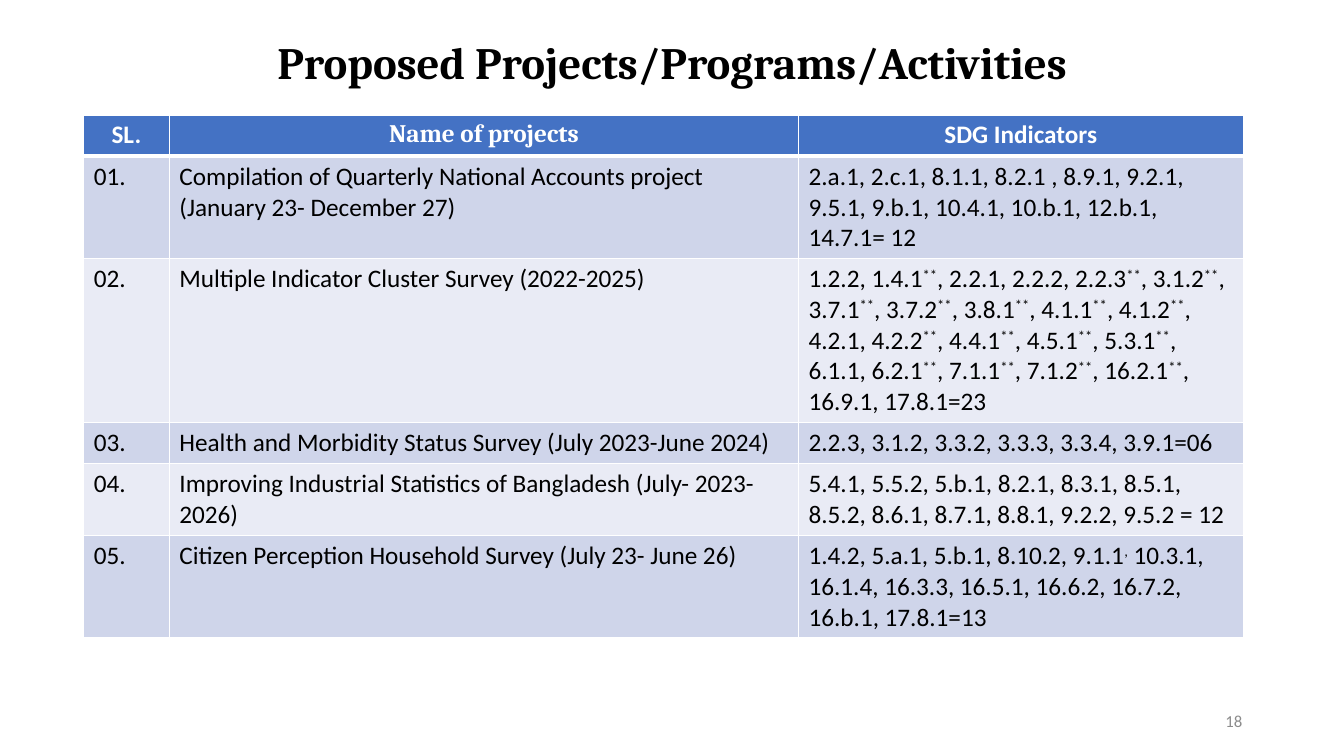
from lxml.etree import SubElement
from pptx import Presentation
from pptx.dml.color import RGBColor
from pptx.enum.text import MSO_ANCHOR, PP_ALIGN
from pptx.oxml.ns import qn
from pptx.util import Inches, Pt

HUES = {
    "ink": "000000",
    "white": "FFFFFF",
    "head": "4472C4",
    "odd": "CFD5EA",
    "even": "E9EBF5",
    "page": "8C8C8C",
}
WIDTHS = (0.85, 6.24, 4.41)
ROW = 0.41
HEADS = (("SL.", "Calibri"), ("Name of projects", "Cambria"), ("SDG Indicators", "Calibri"))
ITEMS = (
    ("Compilation of Quarterly National Accounts project (January 23- December 27)",
     "2.a.1, 2.c.1, 8.1.1, 8.2.1 , 8.9.1, 9.2.1, 9.5.1, 9.b.1, 10.4.1, 10.b.1, "
     "12.b.1, 14.7.1= 12"),
    ("Multiple Indicator Cluster Survey (2022-2025)",
     "1.2.2, 1.4.1^**^, 2.2.1, 2.2.2, 2.2.3^**^, 3.1.2^**^, 3.7.1^**^, 3.7.2^**^, "
     "3.8.1^**^, 4.1.1^**^, 4.1.2^**^, 4.2.1, 4.2.2^**^, 4.4.1^**^, 4.5.1^**^, "
     "5.3.1^**^, 6.1.1, 6.2.1^**^, 7.1.1^**^, 7.1.2^**^, 16.2.1^**^, 16.9.1, 17.8.1=23"),
    ("Health and Morbidity Status Survey (July 2023-June 2024)",
     "2.2.3, 3.1.2, 3.3.2, 3.3.3, 3.3.4, 3.9.1=06"),
    ("Improving Industrial Statistics of Bangladesh (July- 2023-2026)",
     "5.4.1, 5.5.2, 5.b.1, 8.2.1, 8.3.1, 8.5.1, 8.5.2, 8.6.1, 8.7.1, 8.8.1, "
     "9.2.2, 9.5.2 = 12"),
    ("Citizen Perception Household Survey (July 23- June 26)",
     "1.4.2, 5.a.1, 5.b.1, 8.10.2, 9.1.1^,^ 10.3.1, 16.1.4, 16.3.3, 16.5.1, "
     "16.6.2, 16.7.2, 16.b.1, 17.8.1=13"),
)


def tint(name):
    return RGBColor.from_string(HUES[name])


def write(frame, text, hue, align=PP_ALIGN.LEFT, **style):
    para = frame.paragraphs[0]
    para.alignment = align
    for i, part in enumerate(text.split("^")):
        run = para.add_run()
        run.text = part
        run.font.color.rgb = tint(hue)
        for key, value in style.items():
            setattr(run.font, key, value)
        if i % 2:
            run._r.get_or_add_rPr().set("baseline", "30000")
    return para


def edge(cell, base):
    props = cell._tc.get_or_add_tcPr()
    for side, wide in (("L", 1), ("R", 1), ("T", 1), ("B", base)):
        line = SubElement(props, qn(f"a:ln{side}"), w=str(Pt(wide)))
        fill = SubElement(line, qn("a:solidFill"))
        SubElement(fill, qn("a:srgbClr"), val=HUES["white"])


def paint(cell, hue, base=1):
    edge(cell, base)
    cell.fill.solid()
    cell.fill.fore_color.rgb = tint(hue)


def add_title(slide, box):
    title = slide.shapes.title
    for key, value in zip(("left", "top", "width", "height"), box):
        setattr(title, key, Inches(value))
    title.text_frame.vertical_anchor = MSO_ANCHOR.MIDDLE
    para = write(title.text_frame, "Proposed Projects/Programs/Activities", "ink",
                 PP_ALIGN.CENTER, size=Pt(32), name="Cambria", bold=True)
    para.line_spacing = 0.9


def add_grid(slide, left, top):
    count = len(ITEMS) + 1
    grid = slide.shapes.add_table(count, len(WIDTHS), Inches(left), Inches(top),
                                  Inches(sum(WIDTHS)), Inches(ROW * count)).table
    for col, width in zip(grid.columns, WIDTHS):
        col.width = Inches(width)
    for row in grid.rows:
        row.height = Inches(ROW)
    for cell, (text, face) in zip(grid.rows[0].cells, HEADS):
        paint(cell, "head", 3)
        write(cell.text_frame, text, "white", PP_ALIGN.CENTER,
              size=Pt(18), name=face, bold=True)
    for i, item in enumerate(ITEMS, 1):
        for cell, text in zip(grid.rows[i].cells, (f"{i:02}.", *item)):
            paint(cell, "odd" if i % 2 else "even")
            write(cell.text_frame, text, "ink", size=Pt(18), name="Calibri", bold=False)


def add_page(slide, box):
    frame = slide.shapes.add_textbox(*map(Inches, box)).text_frame
    frame.word_wrap = True
    frame.vertical_anchor = MSO_ANCHOR.MIDDLE
    write(frame, "18", "page", PP_ALIGN.RIGHT, size=Pt(12), name="Calibri")


def main():
    deck = Presentation()
    deck.slide_width, deck.slide_height = Inches(13.33), Inches(7.5)
    slide = deck.slides.add_slide(deck.slide_layouts[5])
    add_title(slide, (0.92, 0.4, 11.5, 0.49))
    add_grid(slide, 0.83, 1.14)
    add_page(slide, (9.42, 6.95, 3, 0.4))
    deck.save("out.pptx")


if __name__ == "__main__":
    main()
